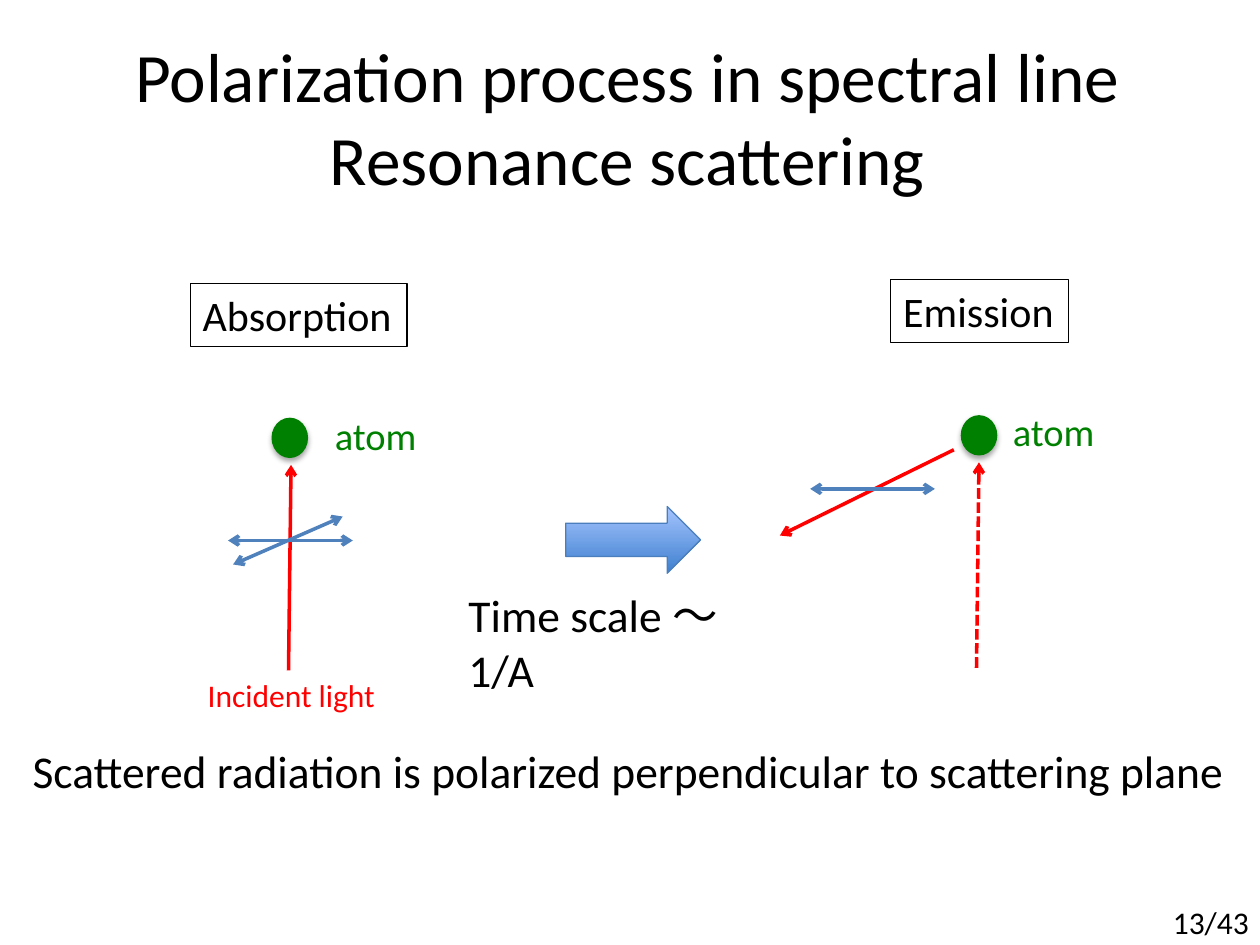
import pptx
import pptx.dml.color
import pptx.enum.dml
import pptx.enum.shapes
import pptx.enum.text
import pptx.oxml
import pptx.oxml.ns
import pptx.util
from lxml import etree

Inches = pptx.util.Inches
Pt = pptx.util.Pt
SHAPE = pptx.enum.shapes.MSO_SHAPE
ALIGN = pptx.enum.text.PP_ALIGN
ANCHOR = pptx.enum.text.MSO_ANCHOR
DASH = pptx.enum.dml.MSO_LINE
qn = pptx.oxml.ns.qn

COLORS = {
    "text": "000000",
    "light": "FF0000",
    "polarization": "4F81BD",
    "atom": "008000",
    "arrow_low": "3F80CE",
    "arrow_high": "A4C4FF",
    "arrow_edge": "4B7EBC",
}
ATOM_SHADOW = (
    f'<a:effectLst {pptx.oxml.ns.nsdecls("a")}>'
    '<a:outerShdw blurRad="39370" dist="22860" dir="5400000" rotWithShape="0">'
    '<a:srgbClr val="000000"><a:alpha val="35000"/></a:srgbClr>'
    '</a:outerShdw></a:effectLst>'
)


def rgb(name):
    return pptx.dml.color.RGBColor.from_string(COLORS[name])


def outline(shape, color, width=0.75):
    shape.line.color.rgb = rgb(color)
    shape.line.width = Pt(width)


def add_text(slide, box, wording, size, color="text", wrap=False,
             align=ALIGN.LEFT, anchor=ANCHOR.TOP):
    label = slide.shapes.add_textbox(*map(Inches, box))
    frame = label.text_frame
    frame.text = wording
    for name, value in {"word_wrap": wrap, "vertical_anchor": anchor}.items():
        setattr(frame, name, value)
    paragraph = frame.paragraphs[0]
    paragraph.alignment = align
    for run in paragraph.runs:
        for name, value in {"name": "Calibri", "size": Pt(size)}.items():
            setattr(run.font, name, value)
        run.font.color.rgb = rgb(color)
    return label


def add_ray(slide, start, end, color, both_ends=False, dash=None):
    ray = slide.shapes.add_connector(
        pptx.enum.shapes.MSO_CONNECTOR.STRAIGHT, *map(Inches, start + end))
    outline(ray, color, 2)
    if dash:
        ray.line.dash_style = dash
    properties = ray._element.spPr
    edge = properties.find(qn("a:ln"))
    for tag in ("a:headEnd", "a:tailEnd") if both_ends else ("a:tailEnd",):
        etree.SubElement(edge, qn(tag), type="arrow")
    etree.SubElement(properties, qn("a:effectLst"))


def add_atom(slide, x, y):
    atom = slide.shapes.add_shape(
        SHAPE.OVAL, *map(Inches, (x, y, 0.28, 0.31)))
    atom.fill.solid()
    atom.fill.fore_color.rgb = rgb("atom")
    outline(atom, "atom")
    atom._element.spPr.append(pptx.oxml.parse_xml(ATOM_SHADOW))


def add_heading(slide, box, wording):
    outline(add_text(slide, box, wording, 24), "text")


def add_absorption(slide, x, y):
    """Unpolarized light travels up to the atom."""
    add_ray(slide, (x + 0.78, y + 3.07), (x + 0.8, y + 1.44), "light")
    add_ray(slide, (x + 0.3, y + 2.04), (x + 1.29, y + 2.04),
            "polarization", both_ends=True)
    add_ray(slide, (x + 0.34, y + 2.23), (x + 1.21, y + 1.85),
            "polarization", both_ends=True)
    add_atom(slide, x + 0.65, y + 1.07)
    add_text(slide, (x + 1.05, y + 0.97, 0.86, 0.47), "atom", 22, "atom")
    add_heading(slide, (x, y, 1.72, 0.5), "Absorption")
    add_text(slide, (x + 0.04, y + 3.07, 1.55, 0.4),
             "Incident light", 18, "light")


def add_emission(slide, x, y):
    """Light polarized along one direction leaves the atom."""
    add_ray(slide, (x + 1.56, y + 3.08), (x + 1.58, y + 1.45),
            "light", dash=DASH.SQUARE_DOT)
    add_atom(slide, x + 1.44, y + 1.08)
    add_text(slide, (x + 1.75, y + 0.97, 0.86, 0.47), "atom", 22, "atom")
    add_ray(slide, (x + 1.38, y + 1.35), (x, y + 2.03), "light")
    add_ray(slide, (x + 0.24, y + 1.66), (x + 1.23, y + 1.66),
            "polarization", both_ends=True)
    add_heading(slide, (x + 0.88, y, 1.41, 0.5), "Emission")


def add_transition(slide, x, y):
    """Block arrow between the two processes, with its time scale."""
    arrow = slide.shapes.add_shape(
        SHAPE.RIGHT_ARROW, *map(Inches, (x + 0.87, y, 1.07, 0.53)))
    arrow.shadow.inherit = False
    arrow.fill.gradient()
    arrow.fill.gradient_angle = 90
    for stop, color in zip(arrow.fill.gradient_stops,
                           ("arrow_low", "arrow_high")):
        stop.color.rgb = rgb(color)
    outline(arrow, "arrow_edge")
    add_text(slide, (x, y + 0.59, 2.7, 0.54), "Time scale 〜 1/A", 26, wrap=True)


def main():
    deck = pptx.Presentation()
    deck.slide_width, deck.slide_height = Inches(10), Inches(7.5)
    slide = deck.slides.add_slide(deck.slide_layouts[6])

    # Title
    add_text(slide, (0.23, 0.3, 9.5, 1.25),
             "Polarization process in spectral line\vResonance scattering",
             39.6, wrap=True, align=ALIGN.CENTER, anchor=ANCHOR.MIDDLE)

    # Scattering process
    add_absorption(slide, 1.51, 2.25)
    add_transition(slide, 3.62, 4.02)
    add_emission(slide, 6.19, 2.22)

    # Conclusion and page number
    add_text(slide, (0.16, 5.85, 9.88, 0.54),
             "Scattered radiation is polarized perpendicular to scattering plane",
             26)
    add_text(slide, (9.21, 7.12, 0.81, 0.4), "13/43", 18)

    deck.save("out.pptx")


if __name__ == "__main__":
    main()
